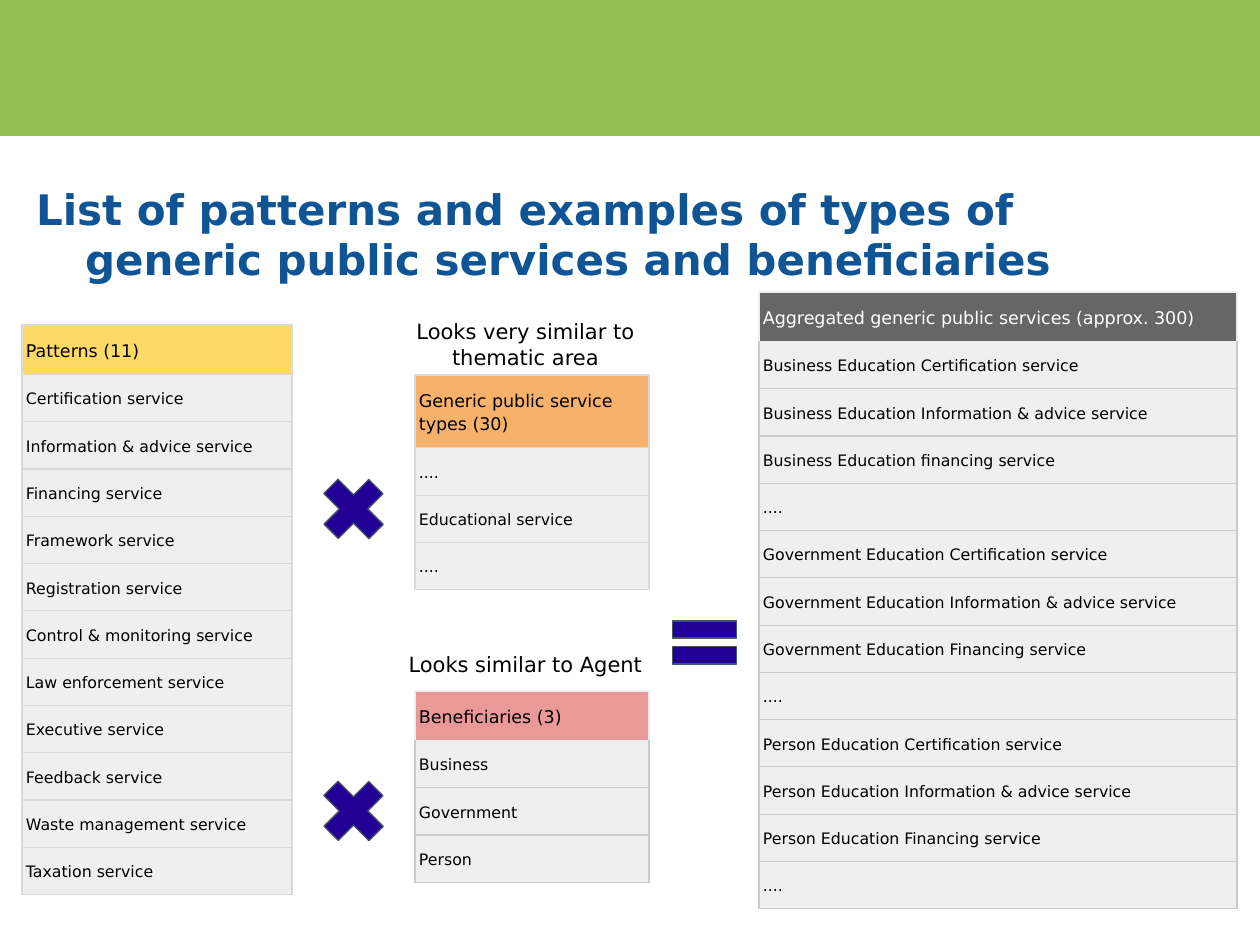
"""Build a slide that combines service patterns, types and beneficiaries."""
import pptx
import pptx.dml.color
import pptx.enum.shapes
import pptx.enum.text
import pptx.oxml
import pptx.oxml.ns
import pptx.util

SCALE = 914400 / 126
FONT = "DejaVu Sans"
BLACK = "000000"
PALE = "EFEFEF"
SHAPES = pptx.enum.shapes.MSO_SHAPE
MIDDLE = pptx.enum.text.MSO_ANCHOR.MIDDLE

PATTERNS = [
    "Patterns (11)", "Certification service", "Information & advice service",
    "Financing service", "Framework service", "Registration service",
    "Control & monitoring service", "Law enforcement service",
    "Executive service", "Feedback service", "Waste management service",
    "Taxation service",
]
TYPES = ["Generic public service types (30)", "....", "Educational service", "...."]
BENEFICIARIES = ["Beneficiaries (3)", "Business", "Government", "Person"]
AGGREGATED = [
    "Aggregated generic public services (approx. 300)",
    "Business Education Certification service",
    "Business Education Information & advice service",
    "Business Education financing service",
    "....",
    "Government Education Certification service",
    "Government Education Information & advice service",
    "Government Education Financing service",
    "....",
    "Person Education Certification service",
    "Person Education Information & advice service",
    "Person Education Financing service",
    "....",
]


def px(length):
    """Turn px into EMU."""
    return pptx.util.Emu(round(length * SCALE))


def colour(code):
    """Turn a hex string into a colour."""
    return pptx.dml.color.RGBColor.from_string(code)


def style_text(paragraph, size, code, bold=False):
    """Format every run of a paragraph."""
    for span in paragraph.runs:
        span.font.name = FONT
        span.font.size = pptx.util.Pt(size)
        span.font.bold = bold
        span.font.color.rgb = colour(code)


def set_margins(target, side, upright):
    """Set the insets of a text frame or a cell."""
    target.margin_left = target.margin_right = px(side)
    target.margin_top = target.margin_bottom = px(upright)


def add_title(page, text, left, top, width, height, hang):
    """Fill and place the title, with a hanging indent."""
    title = page.shapes.title
    title.left, title.top = px(left), px(top)
    title.width, title.height = px(width), px(height)
    frame = title.text_frame
    frame.text = text
    frame.word_wrap = True
    frame.auto_size = pptx.enum.text.MSO_AUTO_SIZE.NONE
    frame.vertical_anchor = MIDDLE
    set_margins(frame, 13, 6)
    paragraph = frame.paragraphs[0]
    paragraph.alignment = pptx.enum.text.PP_ALIGN.LEFT
    properties = paragraph._p.get_or_add_pPr()
    properties.set("marL", str(px(hang)))
    properties.set("indent", str(px(-hang)))
    style_text(paragraph, 24, "0F5494", bold=True)


def add_caption(page, text, left, top, width, height):
    """Add a centred caption above a table."""
    box = page.shapes.add_textbox(px(left), px(top), px(width), px(height))
    frame = box.text_frame
    frame.word_wrap = True
    set_margins(frame, 13, 13)
    frame.text = text
    frame.paragraphs[0].alignment = pptx.enum.text.PP_ALIGN.CENTER
    style_text(frame.paragraphs[0], 12, BLACK)


def add_shape(page, kind, left, top, width, height, fill, line=None):
    """Add a filled preset shape, outlined if a line colour is given."""
    shape = page.shapes.add_shape(kind, px(left), px(top), px(width), px(height))
    shape.shadow.inherit = False
    shape.fill.solid()
    shape.fill.fore_color.rgb = colour(fill)
    if line:
        shape.line.color.rgb = colour(line)
        shape.line.width = pptx.util.Pt(0.75)
    else:
        shape.line.fill.background()
    return shape


def add_sign(page, kind, left, top, width, height, adjustments, rotation=0):
    """Add a mathematical sign."""
    sign = add_shape(page, kind, left, top, width, height, "230095", "465466")
    for index, value in enumerate(adjustments):
        sign.adjustments[index] = value
    sign.rotation = rotation


def set_border(cell, side, code, width):
    """Draw one border of a cell."""
    properties = cell._tc.get_or_add_tcPr()
    properties.append(pptx.oxml.parse_xml(
        f'<a:ln{side} {pptx.oxml.ns.nsdecls("a")} w="{pptx.util.Pt(width)}">'
        f'<a:solidFill><a:srgbClr val="{code}"/></a:solidFill></a:ln{side}>'
    ))


def fill_cell(cell, text, size, code, fill, borders):
    """Write a cell and set its borders and fill."""
    for side, (edge, width) in borders.items():
        set_border(cell, side, edge, width)
    cell.fill.solid()
    cell.fill.fore_color.rgb = colour(fill)
    cell.vertical_anchor = MIDDLE
    set_margins(cell, 4, 13)
    cell.text = text
    paragraph = cell.text_frame.paragraphs[0]
    paragraph.line_spacing = 1.15
    style_text(paragraph, size, code)


def add_list_table(page, items, left, top, width, head_fill, edge, head_edge,
                   head_right=1.5, head_height=49, head_text=BLACK):
    """Add a one-column table whose first item is its header."""
    row_height = 46
    height = head_height + row_height * (len(items) - 1)
    table = page.shapes.add_table(
        len(items), 1, px(left), px(top), px(width), px(height)).table
    table.first_row = table.horz_banding = False
    for index, item in enumerate(items):
        head = index == 0
        table.rows[index].height = px(head_height if head else row_height)
        borders = {side: (head_edge if head else edge, 0.75) for side in "LRTB"}
        if head:
            borders["R"] = (head_edge, head_right)
        elif index == 1:
            borders["T"] = (head_edge, 0.75)
        fill_cell(table.cell(index, 0), item, 10 if head else 9,
                  head_text if head else BLACK, head_fill if head else PALE, borders)


def main():
    """Build and save the deck."""
    deck = pptx.Presentation()
    deck.slide_width, deck.slide_height = px(1260), px(945)
    page = deck.slides.add_slide(deck.slide_layouts[5])
    add_shape(page, SHAPES.RECTANGLE, 0, 0, 1260, 136, "95C154")
    add_title(page, "List of patterns and examples of types of generic public "
              "services and beneficiaries", 23, 176, 1134, 115, 49)
    add_list_table(page, PATTERNS, 22, 325, 270, "FFD966", "D9D9D9", "D9D9D9",
                   head_right=0.75)
    add_list_table(page, AGGREGATED, 759, 292, 478, "666666", "CCCCCC", PALE,
                   head_text="FFFFFF")
    add_list_table(page, TYPES, 415, 375, 234, "F6B26B", "D9D9D9", "D9D9D9",
                   head_height=72)
    add_list_table(page, BENEFICIARIES, 415, 691, 234, "EA9999", "CCCCCC", PALE)
    for top in (466, 768):
        add_sign(page, SHAPES.MATH_PLUS, 310, top, 87, 86, [0.235], rotation=45)
    add_sign(page, SHAPES.MATH_EQUAL, 661, 606, 87, 73, [0.235, 0.118])
    add_caption(page, "Looks very similar to thematic area", 368, 306, 315, 73)
    add_caption(page, "Looks similar to Agent", 368, 639, 315, 52)
    deck.save("out.pptx")


if __name__ == "__main__":
    main()
